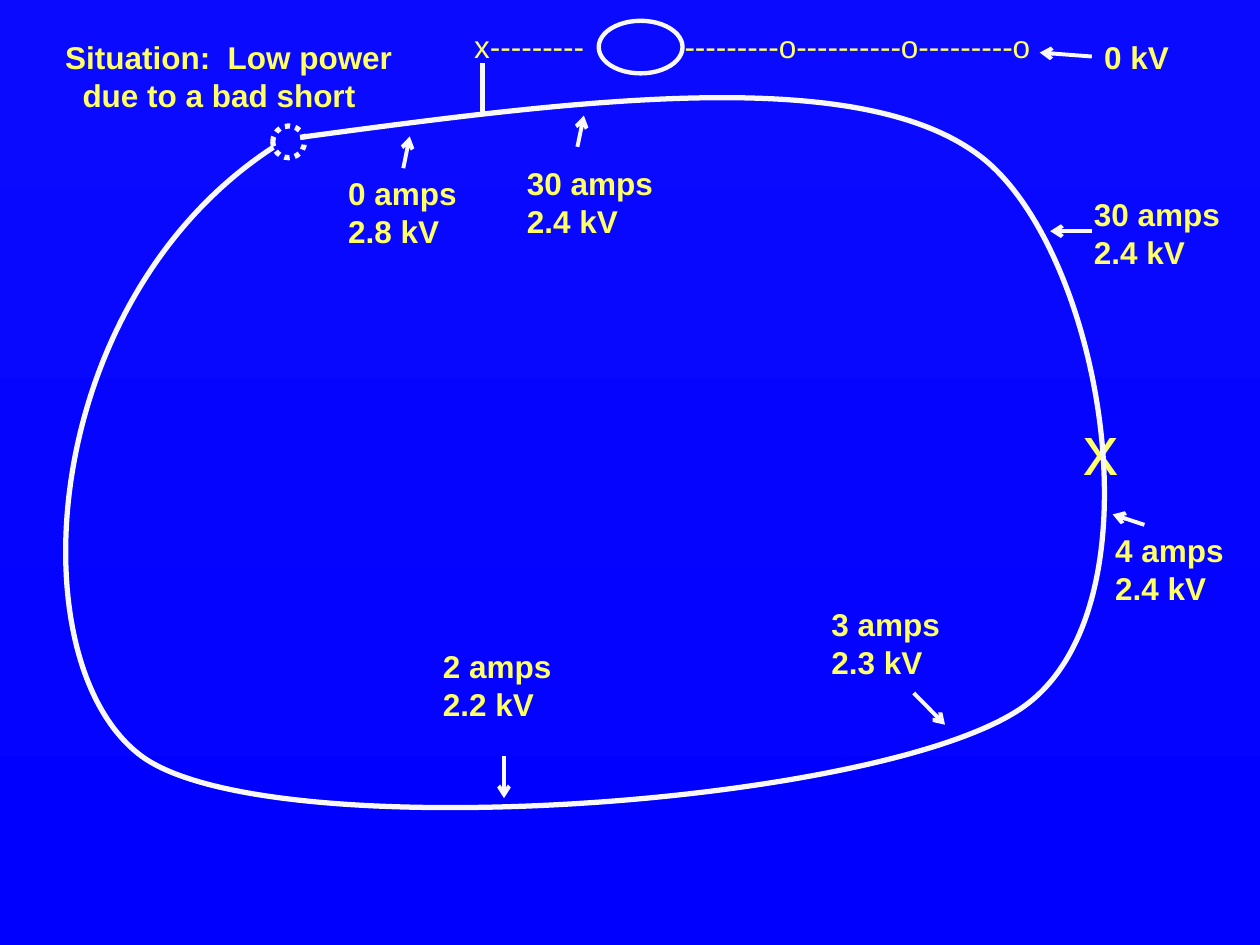
from lxml.etree import SubElement
from pptx import Presentation
from pptx.dml.color import RGBColor
from pptx.enum.dml import MSO_LINE
from pptx.enum.shapes import MSO_CONNECTOR, MSO_SHAPE as Shape
from pptx.enum.text import MSO_ANCHOR, MSO_AUTO_SIZE, PP_ALIGN
from pptx.oxml.ns import qn
from pptx.util import Cm, Pt

COLORS = {"top": "0A0AFF", "bottom": "0000FF", "line": "F8F8F8", "text": "FFFF66"}

READINGS = [
    (21.8, 3.81, "30 amps", "2.4 kV"),
    (22.23, 10.58, "4 amps", "2.4 kV"),
    (6.77, 3.39, "0 amps", "2.8 kV"),
    (10.37, 3.18, "30 amps", "2.4 kV"),
    (8.68, 12.92, "2 amps", "2.2 kV"),
    (16.51, 12.07, "3 amps", "2.3 kV"),
]

ARROWS = [
    (8.13, 3.39, 8.26, 2.75),
    (11.64, 2.96, 11.77, 2.33),
    (22.01, 4.66, 21.17, 4.66),
    (23.07, 10.58, 22.43, 10.37),
    (22.01, 1.14, 20.96, 1.06),
    (10.16, 15.24, 10.16, 16.09),
    (18.42, 13.97, 19.05, 14.61),
]

FENCE_START = (6.05, 2.77)
FENCE_CURVES = [
    ((11.71, 2.01), (17.37, 1.27), (19.8, 3.18)),
    ((22.23, 5.1), (23.47, 12.24), (20.63, 14.25)),
    ((17.8, 16.25), (5.39, 17.12), (2.85, 15.24)),
    ((0.32, 13.36), (0.76, 6.07), (5.51, 2.97)),
]


def color(name):
    return RGBColor.from_string(COLORS[name])


def paint_background(page):
    fill = page.background.fill
    fill.gradient()
    fill.gradient_angle = 270
    for stop, name in zip(fill.gradient_stops, ("top", "bottom")):
        stop.color.rgb = color(name)


def style_line(line, width):
    line.color.rgb = color("line")
    line.width = Pt(width)


def write_lines(box, lines, size=18, bold=True, wrap=False):
    frame = box.text_frame
    frame.word_wrap = wrap
    frame.auto_size = MSO_AUTO_SIZE.SHAPE_TO_FIT_TEXT
    frame.vertical_anchor = MSO_ANCHOR.TOP
    frame.text = "\n".join(lines)
    for para in frame.paragraphs:
        para.alignment = PP_ALIGN.LEFT
        para.space_before = Pt(0)
        para.font.name = "Arial"
        para.font.size = Pt(size)
        para.font.bold = bold
        para.font.color.rgb = color("text")


def add_text(page, left, top, width, height, *lines, **style):
    box = page.shapes.add_textbox(Cm(left), Cm(top), Cm(width), Cm(height))
    write_lines(box, lines, **style)


def add_title(page):
    title = page.shapes.title
    title.left, title.top, title.width, title.height = Cm(1.06), Cm(0.64), Cm(7.16), Cm(1.8)
    write_lines(title, ["Situation:  Low power", "due to a bad short"])
    second = title.text_frame.paragraphs[1]
    second._p.get_or_add_pPr().set("marL", str(Cm(0.35)))


def add_line(page, start_x, start_y, end_x, end_y, width=2.25, arrow=True):
    line = page.shapes.add_connector(
        MSO_CONNECTOR.STRAIGHT, Cm(start_x), Cm(start_y), Cm(end_x), Cm(end_y))
    style_line(line.line, width)
    if arrow:
        SubElement(line.line._get_or_add_ln(), qn("a:tailEnd"), type="arrow")
    SubElement(line._element.spPr, qn("a:effectLst"))


def add_ring(page, left, top, width, height, weight):
    ring = page.shapes.add_shape(Shape.OVAL, Cm(left), Cm(top), Cm(width), Cm(height))
    ring.shadow.inherit = False
    ring.fill.background()
    style_line(ring.line, weight)
    return ring


def bend_segments(shape):
    segments = list(shape._element.iter(qn("a:lnTo")))
    outline = segments[0].getparent()
    for first in range(0, len(segments), 3):
        curve = SubElement(outline, qn("a:cubicBezTo"))
        for segment in segments[first:first + 3]:
            curve.append(segment[0])
            outline.remove(segment)


def add_fence(page):
    builder = page.shapes.build_freeform(Cm(FENCE_START[0]), Cm(FENCE_START[1]))
    points = [(Cm(x), Cm(y)) for curve in FENCE_CURVES for x, y in curve]
    builder.add_line_segments(points, close=False)
    fence = builder.convert_to_shape()
    bend_segments(fence)
    fence.shadow.inherit = False
    fence.fill.background()
    style_line(fence.line, 3)


def main():
    deck = Presentation()
    deck.slide_width, deck.slide_height = Cm(25.4), Cm(19.05)
    page = deck.slides.add_slide(deck.slide_layouts[5])
    paint_background(page)
    add_title(page)

    add_ring(page, 12.07, 0.42, 1.69, 1.06, 2.5)
    add_text(page, 13.55, 0.42, 8.47, 1.02, "---------o----------o---------o", bold=False, wrap=True)
    add_text(page, 9.31, 0.42, 2.96, 1.02, "x---------", bold=False, wrap=True)
    add_line(page, 9.73, 1.27, 9.73, 2.33, width=2.75, arrow=False)
    add_text(page, 21.59, 8.05, 1.23, 1.96, "x", size=40, bold=False)
    add_text(page, 22.01, 0.64, 1.83, 1.02, "0 kV")

    for left, top, current, voltage in READINGS:
        width = 3.07 if current == "30 amps" else 2.72
        add_text(page, left, top, width, 1.8, current, voltage)
    for arrow in ARROWS:
        add_line(page, *arrow)

    add_fence(page)
    short = add_ring(page, 5.5, 2.54, 0.64, 0.64, 3)
    short.line.dash_style = MSO_LINE.ROUND_DOT
    deck.save("out.pptx")


if __name__ == "__main__":
    main()
